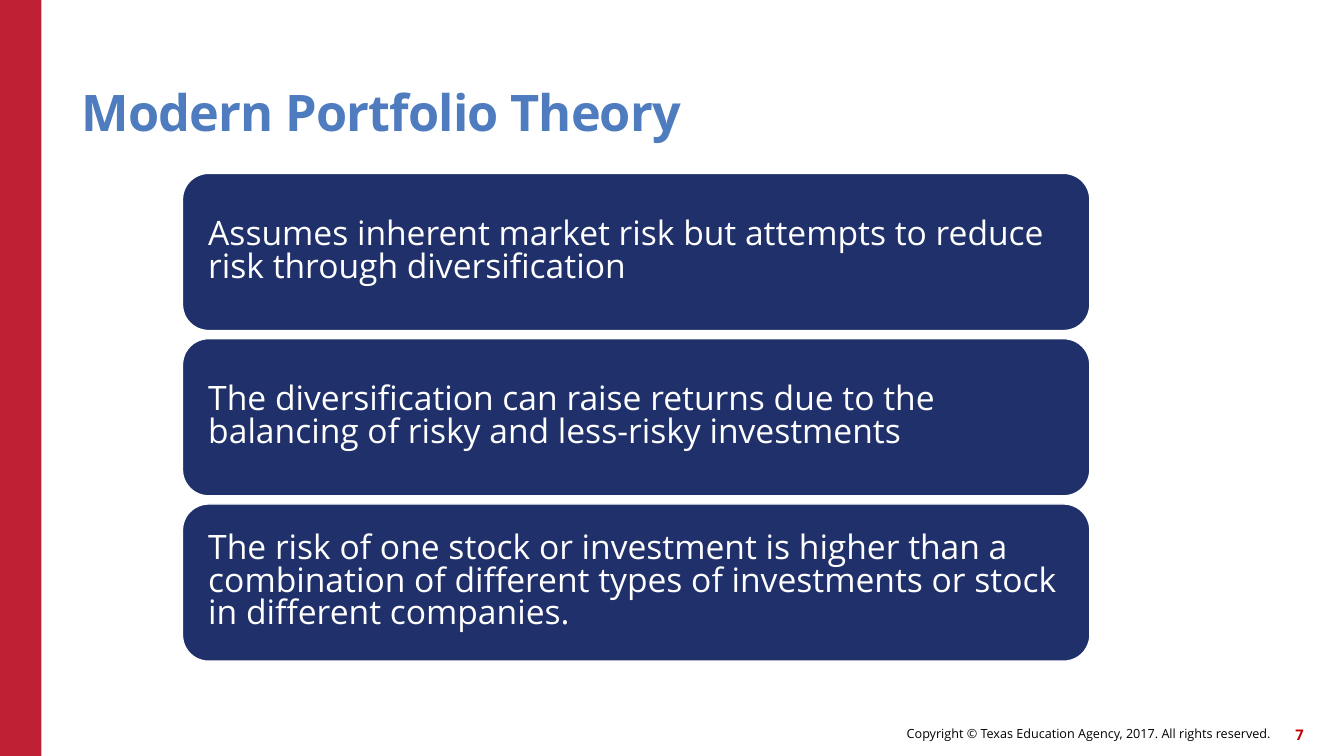
from pptx import Presentation
from pptx.dml.color import RGBColor
from pptx.enum.shapes import MSO_SHAPE
from pptx.enum.text import MSO_ANCHOR, PP_ALIGN
from pptx.util import Inches, Pt

RECTANGLE = MSO_SHAPE.RECTANGLE
ROUNDED = MSO_SHAPE.ROUNDED_RECTANGLE
MIDDLE, BOTTOM = MSO_ANCHOR.MIDDLE, MSO_ANCHOR.BOTTOM
LEFT, RIGHT = PP_ALIGN.LEFT, PP_ALIGN.RIGHT

FONT = "Open Sans"
RED = RGBColor(0xC0, 0x20, 0x33)
DARK_RED = RGBColor(0xC0, 0x00, 0x00)
BLUE = RGBColor(0x4E, 0x7C, 0xBE)
NAVY = RGBColor(0x20, 0x30, 0x6A)
WHITE = RGBColor(0xFF, 0xFF, 0xFF)
BLACK = RGBColor(0x00, 0x00, 0x00)

POINTS = [
    "Assumes inherent market risk but attempts to reduce risk through diversification",
    "The diversification can raise returns due to the balancing of risky and "
    "less-risky investments",
    "The risk of one stock or investment is higher than a combination of different "
    "types of investments or stock in different companies.",
]
CARD_TOP, CARD_STEP = 1.72, 1.64


def write(shape, text, size, color, bold=False, align=LEFT, anchor=MIDDLE,
          margin=0, line_spacing=None):
    frame = shape.text_frame
    frame.word_wrap = True
    frame.vertical_anchor = anchor
    frame.margin_left = frame.margin_right = Inches(margin)
    frame.margin_top = frame.margin_bottom = Inches(margin)
    frame.text = text
    paragraph = frame.paragraphs[0]
    paragraph.alignment = align
    paragraph.line_spacing = line_spacing
    font = paragraph.font
    font.name, font.size, font.bold = FONT, Pt(size), bold
    font.color.rgb = color
    return paragraph


def add_block(slide, preset, left, top, width, height, fill):
    block = slide.shapes.add_shape(
        preset, Inches(left), Inches(top), Inches(width), Inches(height))
    block.shadow.inherit = False
    block.fill.solid()
    block.fill.fore_color.rgb = fill
    block.line.fill.background()
    return block


def add_title(slide, text):
    title = slide.shapes.title
    title.left, title.top = Inches(0.81), Inches(0.45)
    title.width, title.height = Inches(11), Inches(0.96)
    heading = write(title, text, 36, BLUE, bold=True, anchor=BOTTOM, line_spacing=0.9)
    heading.runs[0].font._element.set("spc", "-60")


def add_card(slide, top, text):
    card = add_block(slide, ROUNDED, 1.81, top, 9, 1.56, NAVY)
    card.line.color.rgb = WHITE
    card.line.width = Pt(1)
    write(card, text, 24, WHITE, margin=0.18, line_spacing=0.81)


def add_footer(slide, left, top, width, text, size, color, bold=False):
    footer = slide.shapes.add_textbox(
        Inches(left), Inches(top), Inches(width), Inches(0.32))
    write(footer, text, size, color, bold=bold, align=RIGHT)


def main():
    deck = Presentation()
    deck.slide_width, deck.slide_height = Inches(13.33), Inches(7.5)
    slide = deck.slides.add_slide(deck.slide_layouts[5])
    add_block(slide, RECTANGLE, 0, 0, 0.41, 7.5, RED)
    add_title(slide, "Modern Portfolio Theory")
    for index, point in enumerate(POINTS):
        add_card(slide, CARD_TOP + index * CARD_STEP, point)
    add_footer(slide, 6.14, 7.12, 6.46,
               "Copyright © Texas Education Agency, 2017. All rights reserved.", 9, BLACK)
    add_footer(slide, 12.51, 7.13, 0.42, "7", 10.5, DARK_RED, bold=True)
    deck.save("out.pptx")


if __name__ == "__main__":
    main()
